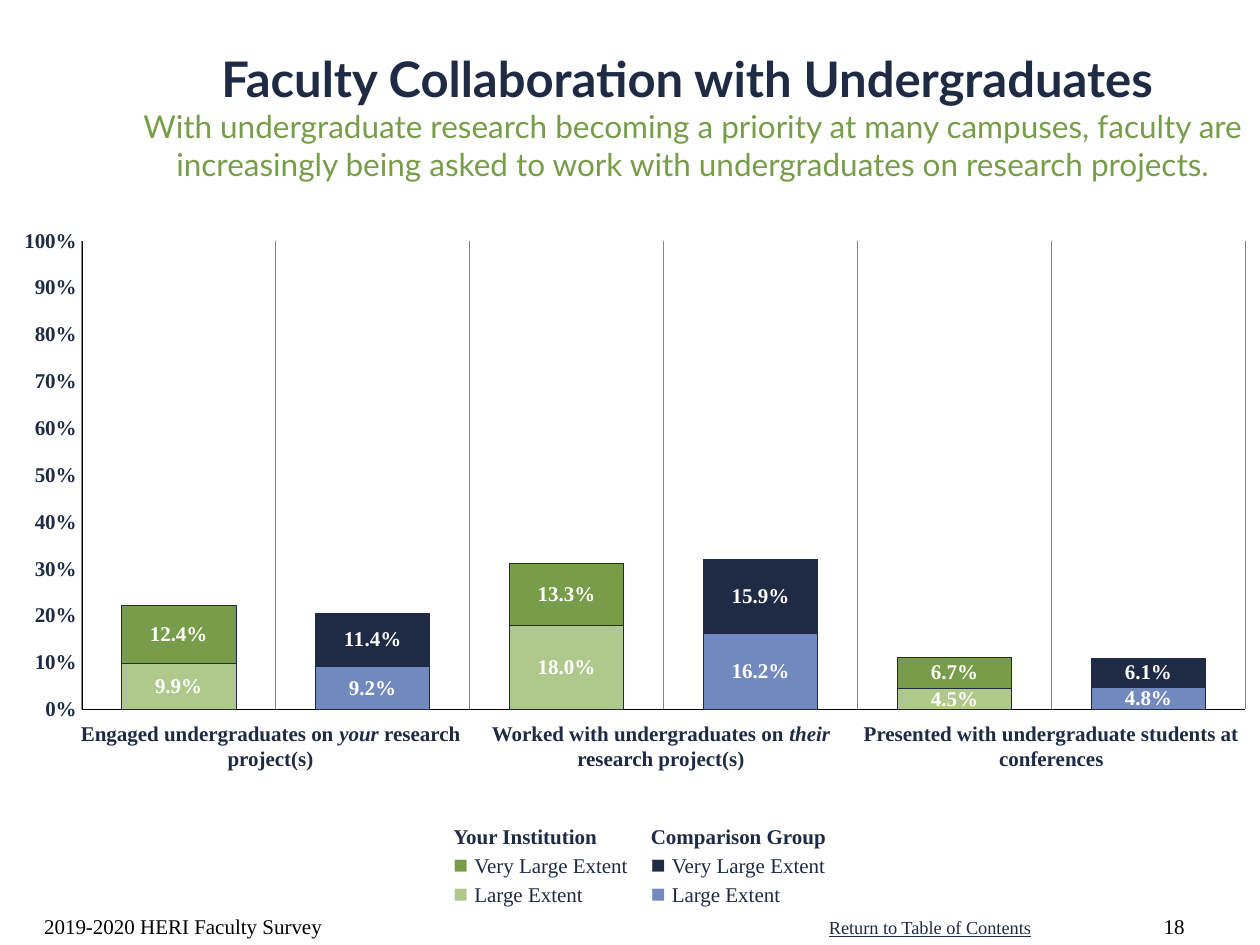
from lxml import etree
from pptx import Presentation
from pptx.chart.data import CategoryChartData
from pptx.dml.color import RGBColor
from pptx.enum.chart import XL_CHART_TYPE as ChartType
from pptx.enum.chart import XL_LABEL_POSITION as LabelPosition
from pptx.enum.chart import XL_TICK_LABEL_POSITION as TickLabels
from pptx.enum.chart import XL_TICK_MARK as TickMark
from pptx.enum.text import MSO_ANCHOR as Anchor
from pptx.enum.text import PP_ALIGN as Align
from pptx.oxml.ns import qn
from pptx.util import Cm, Pt

NAVY = RGBColor(0x1F, 0x2A, 0x44)
GREEN = RGBColor(0x78, 0x9D, 0x4A)
LIGHT_GREEN = RGBColor(0xAF, 0xC9, 0x8D)
BLUE = RGBColor(0x72, 0x89, 0xBF)
GREY = RGBColor(0x86, 0x86, 0x86)
BLACK = RGBColor(0, 0, 0)
WHITE = RGBColor(0xFF, 0xFF, 0xFF)


class SlideBuilder:
    """Holds the text style and the slide being built."""

    font_name = "Times New Roman"
    font_size = 12

    def __init__(self, slide):
        self.slide = slide

    def style(self, font, size=None, color=NAVY, bold=False, italic=False,
              underline=False, name=None):
        font.name = name or self.font_name
        font.size = Pt(size or self.font_size)
        font.color.rgb = color
        font.bold, font.italic, font.underline = bold, italic, underline

    def text(self, left, top, width, height, paragraphs, align=Align.LEFT,
             anchor=Anchor.TOP, wrap=True, side_margin=0.25):
        """Each paragraph is a list of (text, style) runs; None is a line break."""
        box = self.slide.shapes.add_textbox(Cm(left), Cm(top), Cm(width), Cm(height))
        frame = box.text_frame
        frame.word_wrap = wrap
        frame.vertical_anchor = anchor
        frame.margin_left = frame.margin_right = Cm(side_margin)
        for index, runs in enumerate(paragraphs):
            paragraph = frame.add_paragraph() if index else frame.paragraphs[0]
            paragraph.alignment = align
            for item in runs:
                if item is None:
                    paragraph.add_line_break()
                    continue
                run = paragraph.add_run()
                run.text = item[0]
                self.style(run.font, **item[1])

    def stacked_columns(self, left, top, width, height, categories, series, plot):
        """Each series is (name, values, (odd column colour, even column colour))."""
        data = CategoryChartData(number_format="0.0%")
        data.categories = categories
        for name, values, _ in series:
            data.add_series(name, values)
        frame = self.slide.shapes.add_chart(
            ChartType.COLUMN_STACKED, Cm(left), Cm(top), Cm(width), Cm(height), data)
        chart = frame.chart
        chart.has_legend = chart.has_title = False
        self.style(chart.font, bold=True)
        self.axes(chart)
        self.place_plot(chart, plot)

        columns = chart.plots[0]
        columns.gap_width, columns.overlap = 70, 100
        columns.vary_by_categories = False
        for bars, (_, values, colors) in zip(columns.series, series):
            self.paint(bars.format, colors[0])
            for index in range(1, len(values), 2):
                self.paint(bars.points[index].format, colors[1])
            labels = bars.data_labels
            labels.show_value = True
            labels.number_format, labels.number_format_is_linked = "0.0%", False
            labels.position = LabelPosition.CENTER
            self.style(labels.font, color=WHITE, bold=True)

    def axes(self, chart):
        for axis in (chart.category_axis, chart.value_axis):
            axis.major_tick_mark = axis.minor_tick_mark = TickMark.NONE
            axis.format.line.color.rgb = BLACK
            axis.format.line.width = Pt(0.19)
        chart.category_axis.tick_label_position = TickLabels.NONE
        chart.category_axis.has_major_gridlines = True
        chart.category_axis.major_gridlines.format.line.color.rgb = GREY
        chart.category_axis.major_gridlines.format.line.width = Pt(0.75)
        values = chart.value_axis
        values.has_major_gridlines = False
        values.minimum_scale, values.maximum_scale, values.major_unit = 0, 1, 0.1
        values.tick_labels.number_format = "0%"
        values.tick_labels.number_format_is_linked = False

    def paint(self, part, color):
        part.fill.solid()
        part.fill.fore_color.rgb = color
        part.line.color.rgb = NAVY
        part.line.width = Pt(0.25)

    def place_plot(self, chart, plot):
        """Fixes the inner plot area as fractions of the chart."""
        area = chart.plots[0]._element.getparent()
        for old in area.findall(qn("c:layout")):
            area.remove(old)
        layout = etree.Element(qn("c:layout"))
        area.insert(0, layout)
        manual = etree.SubElement(layout, qn("c:manualLayout"))
        settings = [("layoutTarget", "inner"), ("xMode", "edge"), ("yMode", "edge")]
        settings += zip("xywh", plot)
        for tag, value in settings:
            etree.SubElement(manual, qn("c:" + tag)).set("val", str(value))


def main():
    presentation = Presentation()
    presentation.slide_width, presentation.slide_height = Cm(25.4), Cm(19.05)
    builder = SlideBuilder(presentation.slides.add_slide(presentation.slide_layouts[6]))
    bold = {"bold": True}

    # Title and subtitle
    builder.text(2.54, 0.43, 22.86, 3.81, [[
        ("Faculty Collaboration with Undergraduates ",
         {"size": 28, "bold": True, "name": "Lato"}),
        None,
        ("With undergraduate research becoming a priority at many campuses, "
         "faculty are increasingly being asked to work with undergraduates on "
         "research projects.", {"size": 18, "color": GREEN, "name": "Lato"}),
    ]], align=Align.CENTER, anchor=Anchor.MIDDLE)

    # Chart: institution and comparison columns alternate
    builder.stacked_columns(
        0.15, 4.45, 24.97, 10.16, ["1", "2", "3", "4", "5", "6"],
        [("Series 1", (0.099, 0.092, 0.18, 0.162, 0.045, 0.048), (LIGHT_GREEN, BLUE)),
         ("Series 2", (0.124, 0.114, 0.133, 0.159, 0.067, 0.061), (GREEN, NAVY))],
        plot=(0.06, 0.04, 0.94, 0.93))

    # Question under each pair of columns
    italic = {"bold": True, "italic": True}
    questions = [
        [("Engaged undergraduates on ", bold), ("your", italic),
         (" research project(s)", bold)],
        [("Worked with undergraduates on ", bold), ("their", italic),
         (" research project(s)", bold)],
        [("Presented with undergraduate students at conferences", bold)],
    ]
    question_width = 7.87
    for index, runs in enumerate(questions):
        builder.text(1.52 + index * question_width, 14.4, question_width, 1.3,
                     [runs], align=Align.CENTER, side_margin=0)

    # Legend
    groups = [("Your Institution", GREEN, LIGHT_GREEN),
              ("Comparison Group", NAVY, BLUE)]
    for index, (heading, very_large, large) in enumerate(groups):
        paragraphs = [[(heading, bold)]]
        for label, color in (("Very Large Extent", very_large), ("Large Extent", large)):
            paragraphs.append([("■ ", {"size": 14, "color": color}), (label, {})])
        builder.text(9.14 + index * 3.98, 16.48, 3.98, 2, paragraphs, side_margin=0)

    # Footer
    builder.text(0.64, 17.78, 8.05, 1.27,
                 [[("2019-2020 HERI Faculty Survey", {"color": BLACK})]],
                 anchor=Anchor.BOTTOM)
    builder.text(16.46, 18.34, 4.62, 0.71,
                 [[("Return to Table of Contents", {"size": 10.5, "underline": True})]],
                 wrap=False)
    builder.text(22.86, 17.78, 1.27, 1.27, [[("18", {"color": BLACK})]],
                 align=Align.RIGHT, anchor=Anchor.BOTTOM)

    presentation.save("out.pptx")


if __name__ == "__main__":
    main()
